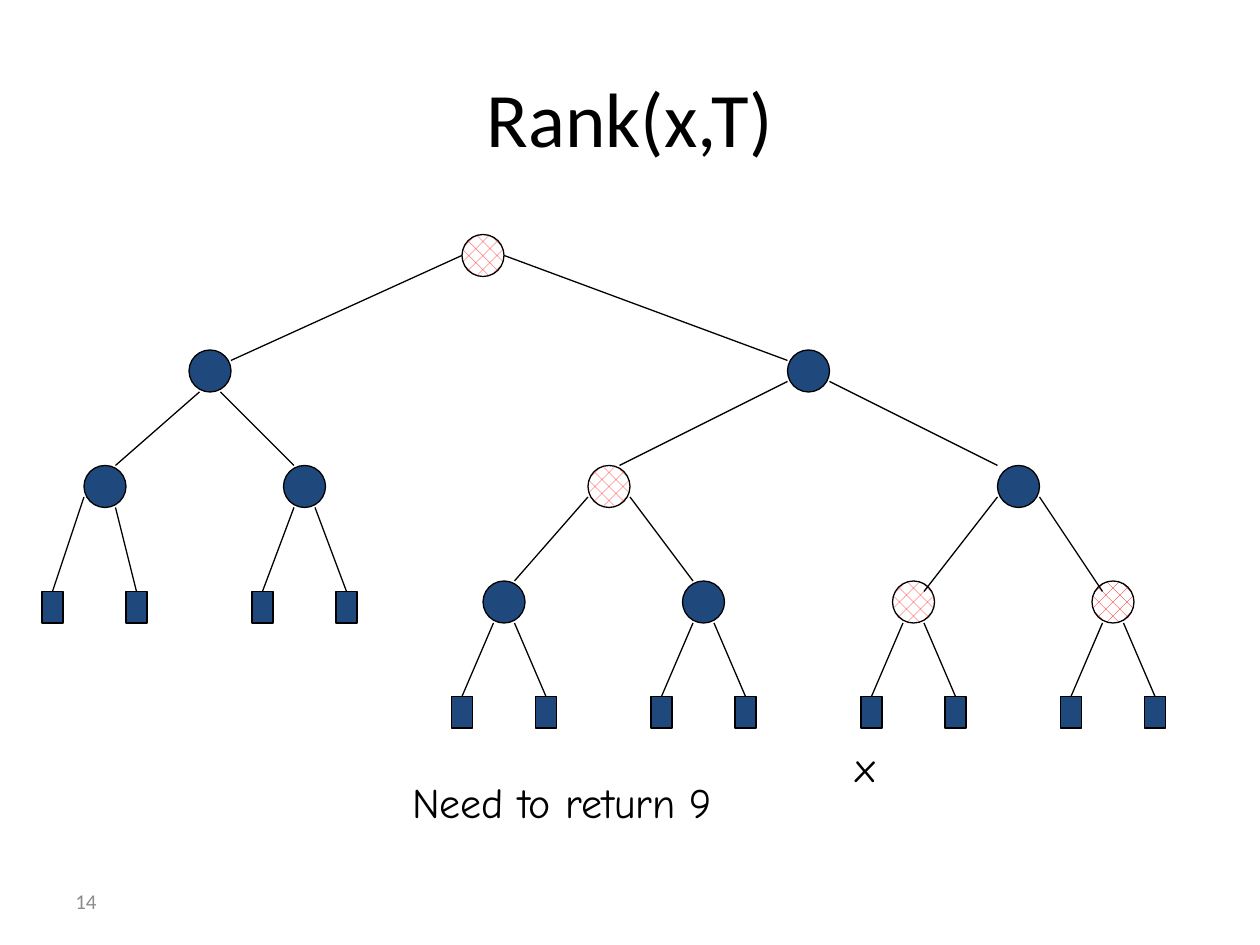
"""Draw the Rank(x,T) binary search tree slide."""
from collections import namedtuple

from lxml.etree import SubElement
from pptx import Presentation
from pptx.dml.color import RGBColor
from pptx.enum.dml import MSO_PATTERN as Pattern
from pptx.enum.shapes import MSO_CONNECTOR as Connector, MSO_SHAPE as Shape
from pptx.enum.text import MSO_ANCHOR as Anchor, PP_ALIGN as Align
from pptx.oxml.ns import qn
from pptx.util import Cm, Pt

GRID = 2.54 / 12
ROOT_Y, LEVEL_STEP = 24.33, 11
Node = namedtuple("Node", "x level marked parent leave arrive", defaults=(None, None, None))

NODES = {
    "root": Node(46, 0, True),
    "left": Node(20, 1, False, "root", (-2, 0), (2, -1)),
    "right": Node(77, 1, False, "root", (2, 0), (-2, -1)),
    "left_left": Node(10, 2, False, "left", (-1, 2), (1, -2)),
    "left_right": Node(29, 2, False, "left", (1, 2), (-1, -2)),
    "right_left": Node(58, 2, True, "right", (-2, 1), (1, -2)),
    "right_right": Node(97, 2, False, "right", (2, 1), (-2, -2)),
    "inner_a": Node(48, 3, False, "right_left", (-2, 1), (1, -2)),
    "inner_b": Node(67, 3, False, "right_left", (2, 1), (-1, -2)),
    "inner_c": Node(87, 3, True, "right_right", (-2, 1), (1, -1)),
    "inner_d": Node(106, 3, True, "right_right", (2, 1), (-1, -1)),
}
LEAF_PARENTS = ("left_right", "inner_a", "inner_b", "inner_c", "inner_d")
LEAVES = [(parent, (side, 2), NODES[parent].x + 4 * side)
          for parent in LEAF_PARENTS for side in (-1, 1)]
LEAVES += [("left_left", (-2, 1), 5), ("left_left", (1, 2), 13)]


def color(value):
    return RGBColor.from_string(value)


def grid(units):
    return Cm(units * GRID)


def center(name):
    node = NODES[name]
    return node.x, ROOT_Y + LEVEL_STEP * node.level


def shifted(point, offset):
    return point[0] + offset[0], point[1] + offset[1]


def leaf_top(parent):
    return center(parent)[1] + (10 if NODES[parent].level == 2 else 9)


class TreeSlide:
    """Hold the tree style and the slide being drawn."""

    ink, solid, mark, paper = "000000", "1F497D", "FF0000", "FFFFFF"
    line_width = Pt(0.75)

    def __init__(self, deck):
        self.slide = deck.slides.add_slide(deck.slide_layouts[5])

    def font(self, paragraph, name, size, hue):
        paragraph.font.name = name
        paragraph.font.size = Pt(size)
        paragraph.font.color.rgb = color(hue)

    def title(self, text):
        title = self.slide.shapes.title
        title.left, title.top, title.width, title.height = Cm(1.27), Cm(0.76), Cm(22.86), Cm(3.18)
        title.text_frame.text = text
        title.text_frame.vertical_anchor = Anchor.MIDDLE
        heading = title.text_frame.paragraphs[0]
        heading.alignment = Align.CENTER
        self.font(heading, "Calibri", 44, self.ink)

    def label(self, text, left, top, width, height, name="Comic Neue", size=24,
              hue=ink, align=Align.LEFT, anchor=Anchor.TOP):
        frame = self.slide.shapes.add_textbox(Cm(left), Cm(top), Cm(width), Cm(height)).text_frame
        frame.word_wrap = True
        frame.vertical_anchor = anchor
        frame.text = text
        frame.paragraphs[0].alignment = align
        self.font(frame.paragraphs[0], name, size, hue)

    def mark_shape(self, kind, left, top, width, height, marked=False):
        shape = self.slide.shapes.add_shape(kind, grid(left), grid(top), grid(width), grid(height))
        shape.shadow.inherit = False
        shape.line.color.rgb = color(self.ink)
        shape.line.width = self.line_width
        if marked:
            shape.fill.patterned()
            shape.fill.pattern = Pattern.PERCENT_25
            shape.fill.fore_color.rgb = color(self.mark)
            shape.fill.back_color.rgb = color(self.paper)
        else:
            shape.fill.solid()
            shape.fill.fore_color.rgb = color(self.solid)

    def node(self, middle, marked):
        x, y = middle
        self.mark_shape(Shape.OVAL, x - 2, y - 2, 4, 4, marked)

    def leaf(self, x, top):
        self.mark_shape(Shape.RECTANGLE, x - 1, top, 2, 3)

    def edge(self, start, end):
        edge = self.slide.shapes.add_connector(
            Connector.STRAIGHT, *(grid(units) for units in (*start, *end)))
        edge.line.color.rgb = color(self.ink)
        edge.line.width = self.line_width
        SubElement(edge._element.spPr, qn("a:effectLst"))


def main():
    deck = Presentation()
    deck.slide_width, deck.slide_height = Cm(25.4), Cm(19.05)
    tree = TreeSlide(deck)
    tree.title("Rank(x,T)")
    tree.label("14", 1.27, 17.65, 5.93, 1.02, "Calibri", 12, "8C8C8C", anchor=Anchor.MIDDLE)

    for name, node in NODES.items():
        tree.node(center(name), node.marked)
    for parent, leave, x in LEAVES:
        tree.leaf(x, leaf_top(parent))

    for name, node in NODES.items():
        if node.parent:
            tree.edge(shifted(center(node.parent), node.leave), shifted(center(name), node.arrive))
    for parent, leave, x in LEAVES:
        tree.edge(shifted(center(parent), leave), (x, leaf_top(parent)))

    tree.label("x", 17, 14.81, 6.58, 1.27)
    tree.label("Need to return 9", 1.7, 15.52, 12.9, 1.27, align=Align.RIGHT)
    deck.save("out.pptx")


if __name__ == "__main__":
    main()
